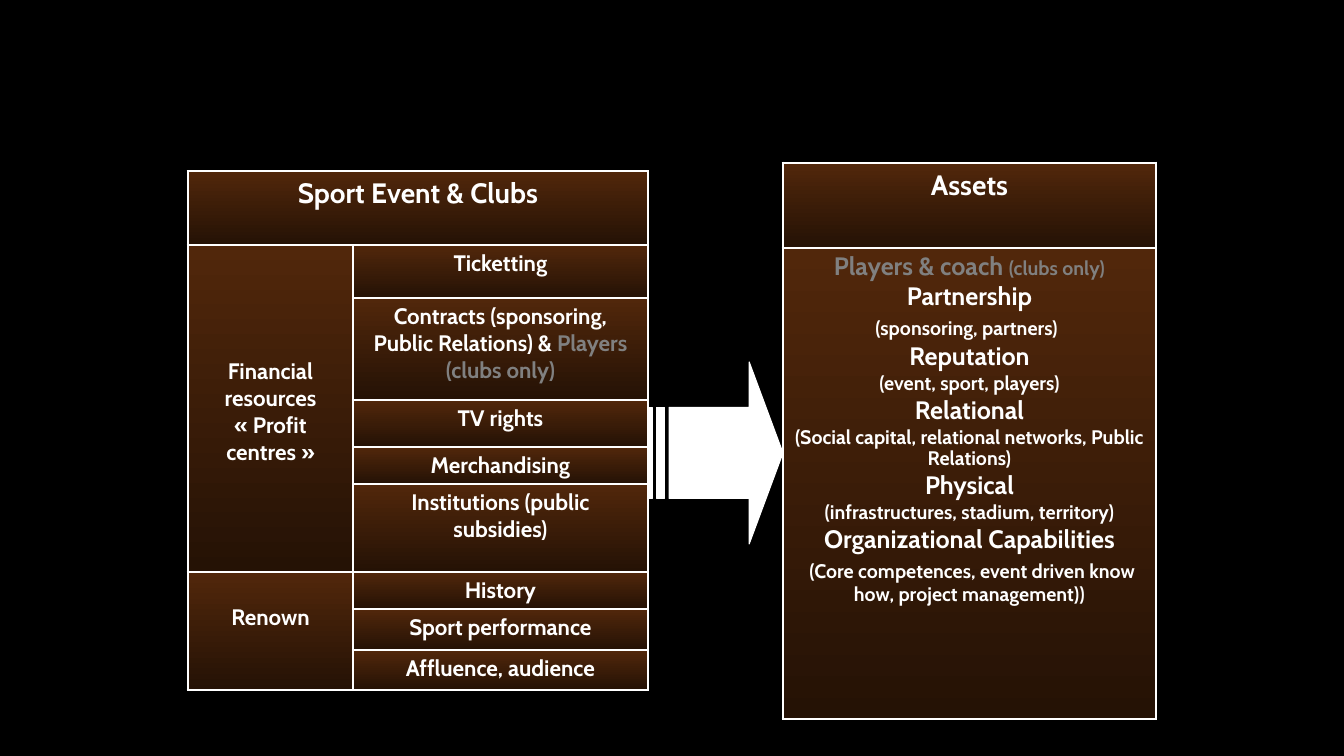
from pptx import Presentation
from pptx.dml.color import RGBColor
from pptx.enum.shapes import MSO_SHAPE
from pptx.enum.text import PP_ALIGN
from pptx.oxml import parse_xml
from pptx.oxml.ns import nsdecls
from pptx.util import Pt

ARROW = MSO_SHAPE.STRIPED_RIGHT_ARROW
CENTER = PP_ALIGN.CENTER
WHITE, GRAY, BLACK = "FFFFFF", "808080", "000000"
SHADE = ["51270B", "251205"]
FACE = "Cabin"
THIN, THICK = 1, 2.25
PX = 914400 / 100.8
LINE = 27

SOURCE = {"at": (188, 171), "cols": [165, 295],
          "rows": [74, 53, 102, 47, 37, 88, 37, 41, 40]}
ASSET = {"at": (783, 163), "cols": [373], "rows": [85, 471]}
SHAFT = (648, 362, 135, 182)

GROUPS = [
    (1, 5, 4, ["Financial resources", "« Profit centres »"]),
    (6, 3, 1, ["Renown"]),
]
ITEMS = [
    [("Ticketting", 16, WHITE)],
    [("Contracts (sponsoring, Public Relations) & ", 16, WHITE),
     ("Players (clubs only)", 16, GRAY)],
    [("TV rights", 16, WHITE)],
    [("Merchandising", 16, WHITE)],
    [("Institutions (public subsidies)", 16, WHITE)],
    [("History", 16, WHITE)],
    [("Sport performance", 16, WHITE)],
    [("Affluence, audience", 16, WHITE)],
]
ASSETS = [
    [("Players & coach ", 18, GRAY), ("(clubs only)", 14, GRAY)],
    [("Partnership", 18, WHITE)],
    [("(sponsoring, partners)", 14, WHITE), (" ", 18, WHITE)],
    [("Reputation", 18, WHITE)],
    [("(event, sport, players)", 14, WHITE)],
    [("Relational", 18, WHITE)],
    [("(Social capital, relational networks, Public Relations)", 14, WHITE)],
    [("Physical", 18, WHITE)],
    [("(infrastructures, stadium, territory)", 14, WHITE)],
    [("Organizational Capabilities", 18, WHITE)],
    [(" ", 18, WHITE),
     ("(Core competences, event driven know how, project management))", 14, WHITE)],
]


def px(num):
    return round(num * PX)


def color(code):
    return RGBColor.from_string(code)


def grid(slide, plan):
    cols, rows = plan["cols"], plan["rows"]
    box = [px(n) for n in (*plan["at"], sum(cols), sum(rows))]
    table = slide.shapes.add_table(len(rows), len(cols), *box).table
    table.first_row = table.horz_banding = False
    for col, wide in zip(table.columns, cols):
        col.width = px(wide)
    for row, tall in zip(table.rows, rows):
        row.height = px(tall)
    return table


def paint(cell, edges):
    cell.fill.gradient()
    cell.fill.gradient_angle = 270
    for stop, code in zip(cell.fill.gradient_stops, SHADE):
        stop.color.rgb = color(code)
    props = cell._tc.get_or_add_tcPr()
    for spot, (side, size) in enumerate(zip("LRTB", edges)):
        props.insert(spot, parse_xml(
            f'<a:ln{side} {nsdecls("a")} w="{Pt(size)}"><a:solidFill>'
            f'<a:srgbClr val="{WHITE}"/></a:solidFill></a:ln{side}>'))


def write(cell, paras, top=5, space=None):
    for name, num in {"left": 10, "right": 10, "top": top, "bottom": 5}.items():
        setattr(cell, "margin_" + name, px(num))
    frame = cell.text_frame
    for spot, runs in enumerate(paras):
        para = frame.add_paragraph() if spot else frame.paragraphs[0]
        para.alignment = CENTER
        if space:
            para.line_spacing = space
            if spot:
                para.space_before = Pt(max(size for _, size, _ in runs) / 10)
        for text, size, code in runs:
            run = para.add_run()
            run.text = text
            for key, val in {"name": FACE, "size": Pt(size), "bold": True}.items():
                setattr(run.font, key, val)
            run.font.color.rgb = color(code)


def source(slide):
    table = grid(slide, SOURCE)
    last = len(SOURCE["rows"]) - 1
    for row in range(last + 1):
        base = THICK if row == last else THIN
        right = THICK if 1 < row < last else THIN
        paint(table.cell(row, 0), (THICK, THIN, THIN, base))
        paint(table.cell(row, 1), (THIN, right, THIN, base))
    table.cell(0, 0).merge(table.cell(0, 1))
    write(table.cell(0, 0), [[("Sport Event & Clubs", 20, WHITE)]])
    for row, count, drop, lines in GROUPS:
        head = table.cell(row, 0)
        head.merge(table.cell(row + count - 1, 0))
        write(head, [[(text, 16, WHITE)] for text in lines], 5 + drop * LINE)
    for row, runs in enumerate(ITEMS, 1):
        write(table.cell(row, 1), [runs])


def assets(slide):
    table = grid(slide, ASSET)
    head, body = table.cell(0, 0), table.cell(1, 0)
    paint(head, (THICK, THICK, THICK, THIN))
    paint(body, (THICK, THICK, THIN, THICK))
    write(head, [[("Assets", 20, WHITE)]])
    write(body, ASSETS, space=0.9)


def arrow(slide):
    shape = slide.shapes.add_shape(ARROW, *[px(n) for n in SHAFT])
    shape.shadow.inherit = False
    shape.adjustments[0] = 0.5
    shape.adjustments[1] = 0.25
    shape.fill.solid()
    shape.fill.fore_color.rgb = color(WHITE)
    shape.line.color.rgb = color(WHITE)
    shape.line.width = Pt(0.75)


def main():
    deck = Presentation()
    deck.slide_width, deck.slide_height = px(1344), px(756)
    slide = deck.slides.add_slide(deck.slide_layouts[6])
    slide.background.fill.solid()
    slide.background.fill.fore_color.rgb = color(BLACK)
    source(slide)
    assets(slide)
    arrow(slide)
    deck.save("out.pptx")


if __name__ == "__main__":
    main()
